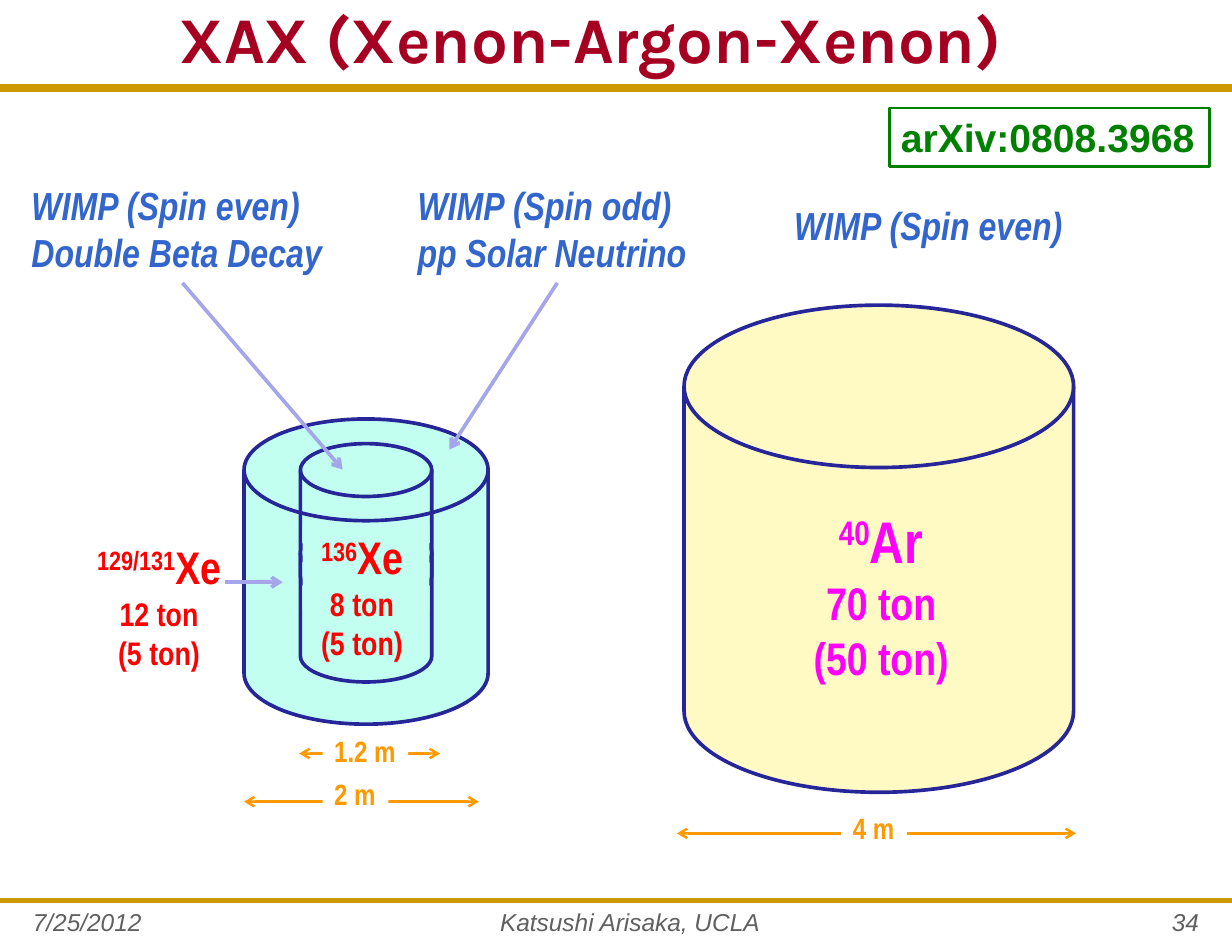
from lxml.etree import SubElement
from pptx import Presentation
from pptx.dml.color import RGBColor
from pptx.enum.shapes import MSO_CONNECTOR as Connector, MSO_SHAPE as Shape
from pptx.enum.text import MSO_ANCHOR as Anchor, MSO_AUTO_SIZE as AutoSize, PP_ALIGN as Align
from pptx.oxml.ns import qn
from pptx.util import Pt

PX = 9144
COLORS = {
    "gold": "CC9900", "title": "A50021", "gray": "606060", "orange": "FF9900",
    "white": "FFFFFF", "navy": "262699", "argon": "FFF9C3", "xenon": "C2FFF0",
    "red": "FF0000", "magenta": "FF00FF", "blue": "3366CC", "lilac": "A5A5E9",
    "green": "008000",
}


def color(name):
    return RGBColor.from_string(COLORS[name])


def write(box, lines, size, ink, font="Arial Narrow", bold=True, italic=False,
          align=Align.LEFT, anchor=Anchor.TOP, wrap=False, inset=10, spacing=None):
    frame = box.text_frame
    frame.word_wrap = wrap
    frame.auto_size = AutoSize.NONE if wrap else AutoSize.SHAPE_TO_FIT_TEXT
    frame.vertical_anchor = anchor
    frame.margin_left = frame.margin_right = inset * PX
    frame.margin_top = frame.margin_bottom = 5 * PX
    sizes = size if isinstance(size, list) else [size] * len(lines)
    for index, (line, points) in enumerate(zip(lines, sizes)):
        para = frame.paragraphs[0] if index == 0 else frame.add_paragraph()
        para.alignment = align
        if spacing:
            para.line_spacing = spacing
        raised, mark, plain = line.rpartition("^")
        for text, baseline in ((raised, 30000), (plain, 0)):
            if not text:
                continue
            span = para.add_run()
            span.text = text
            span.font.name = font
            span.font.size = Pt(points)
            span.font.bold = bold
            span.font.italic = italic
            span.font.color.rgb = color(ink)
            if baseline:
                span.font._element.set("baseline", str(baseline))


class Sketch:
    line_width = 2.25
    label_height = 40

    def __init__(self, page):
        self.page = page

    def title(self, text, left, top, width, height):
        box = self.page.shapes.title
        box.left, box.top, box.width, box.height = (n * PX for n in (left, top, width, height))
        write(box, [text], 40, "title", font="Karla", align=Align.CENTER,
              anchor=Anchor.MIDDLE, wrap=True, inset=11, spacing=0.8)

    def text(self, lines, left, top, width, height, **style):
        box = self.page.shapes.add_textbox(left * PX, top * PX, width * PX, height * PX)
        write(box, lines, **style)
        return box

    def shape(self, kind, left, top, width, height, fill=None, line=None, weight=line_width):
        shape = self.page.shapes.add_shape(kind, left * PX, top * PX, width * PX, height * PX)
        shape.shadow.inherit = False
        if fill:
            shape.fill.solid()
            shape.fill.fore_color.rgb = color(fill)
        else:
            shape.fill.background()
        if line:
            shape.line.color.rgb = color(line)
            shape.line.width = Pt(weight)
        else:
            shape.line.fill.background()
        return shape

    def cylinder(self, left, top, width, height, fill=None):
        self.shape(Shape.FLOWCHART_MAGNETIC_DISK, left, top, width, height, fill, "navy")

    def line(self, start, end, ink, weight=line_width, arrows=(), source=None):
        line = self.page.shapes.add_connector(
            Connector.STRAIGHT, *(n * PX for n in (*start, *end)))
        if source is not None:
            line.begin_connect(source, 2)
        line.line.color.rgb = color(ink)
        line.line.width = Pt(weight)
        for arrow in arrows:
            SubElement(line.line._get_or_add_ln(), qn(f"a:{arrow}"), type="arrow")
        SubElement(line._element.spPr, qn("a:effectLst"))

    def dimension(self, text, left, right, level, label_left, label_top, label_width):
        self.line((left, level), (right, level), "orange", 1.5, ("headEnd", "tailEnd"))
        label = self.shape(Shape.RECTANGLE, label_left, label_top, label_width,
                           self.label_height, "white")
        write(label, [text], 18, "orange")

    def mass(self, lines, left, top, width, height, sizes, ink):
        self.text(lines, left, top, width, height, size=sizes, ink=ink, align=Align.CENTER)

    def signal(self, lines, left, top, width, height, target=None, wrap=False):
        box = self.text(lines, left, top, width, height, size=24, ink="blue",
                        italic=True, wrap=wrap)
        if target:
            start = (left + width // 2, top + height)
            self.line(start, target, "lilac", arrows=("tailEnd",), source=box)

    def footer(self, text, left, width, align):
        self.text([text], left, 768, width, 32, size=15, ink="gray", font="Arial",
                  bold=False, italic=True, align=align, wrap=True, inset=11)


def main():
    deck = Presentation()
    deck.slide_width, deck.slide_height = 1050 * PX, 800 * PX
    page = deck.slides.add_slide(deck.slide_layouts[5])
    sketch = Sketch(page)

    for level, weight in ((75, 4.5), (767, 3)):
        sketch.line((0, level), (1050, level), "gold", weight)
    sketch.title("XAX (Xenon-Argon-Xenon)", 75, 1, 857, 75)

    sketch.dimension("4 m", 577, 917, 710, 717, 685, 56)
    sketch.dimension("2 m", 208, 408, 683, 275, 656, 56)
    sketch.dimension("1.2 m", 255, 375, 642, 275, 620, 73)

    sketch.cylinder(583, 260, 332, 415, "argon")
    sketch.cylinder(208, 357, 208, 260, "xenon")
    sketch.cylinder(256, 378, 112, 135)
    sketch.cylinder(256, 449, 112, 132)
    sketch.shape(Shape.RECTANGLE, 258, 447, 108, 73, "xenon")

    xenon_sizes = [28, 20, 20]
    sketch.mass(["129/131^Xe", "12 ton", "(5 ton)"], 67, 454, 137, 125, xenon_sizes, "red")
    sketch.mass(["136^Xe", "8 ton", "(5 ton)"], 261, 446, 95, 125, xenon_sizes, "red")
    sketch.mass(["40^Ar", "70 ton", "(50 ton)"], 683, 425, 136, 165, [36, 28, 28], "magenta")
    sketch.line((192, 496), (241, 496), "lilac", arrows=("tailEnd",))

    sketch.signal(["WIMP (Spin even)", "Double Beta Decay"], 17, 150, 277, 91, (292, 400))
    sketch.signal(["WIMP (Spin odd)", "pp Solar Neutrino"], 346, 150, 258, 91, (383, 383))
    sketch.signal(["WIMP (Spin even)"], 667, 167, 292, 50, wrap=True)

    reference = sketch.shape(Shape.RECTANGLE, 758, 92, 273, 50, line="green", weight=1.5)
    write(reference, ["arXiv:0808.3968"], 24, "green", font="Arial")

    sketch.footer("7/25/2012", 17, 208, Align.LEFT)
    sketch.footer("Katsushi Arisaka, UCLA", 233, 608, Align.CENTER)
    sketch.footer("34", 850, 183, Align.RIGHT)
    deck.save("out.pptx")


if __name__ == "__main__":
    main()
